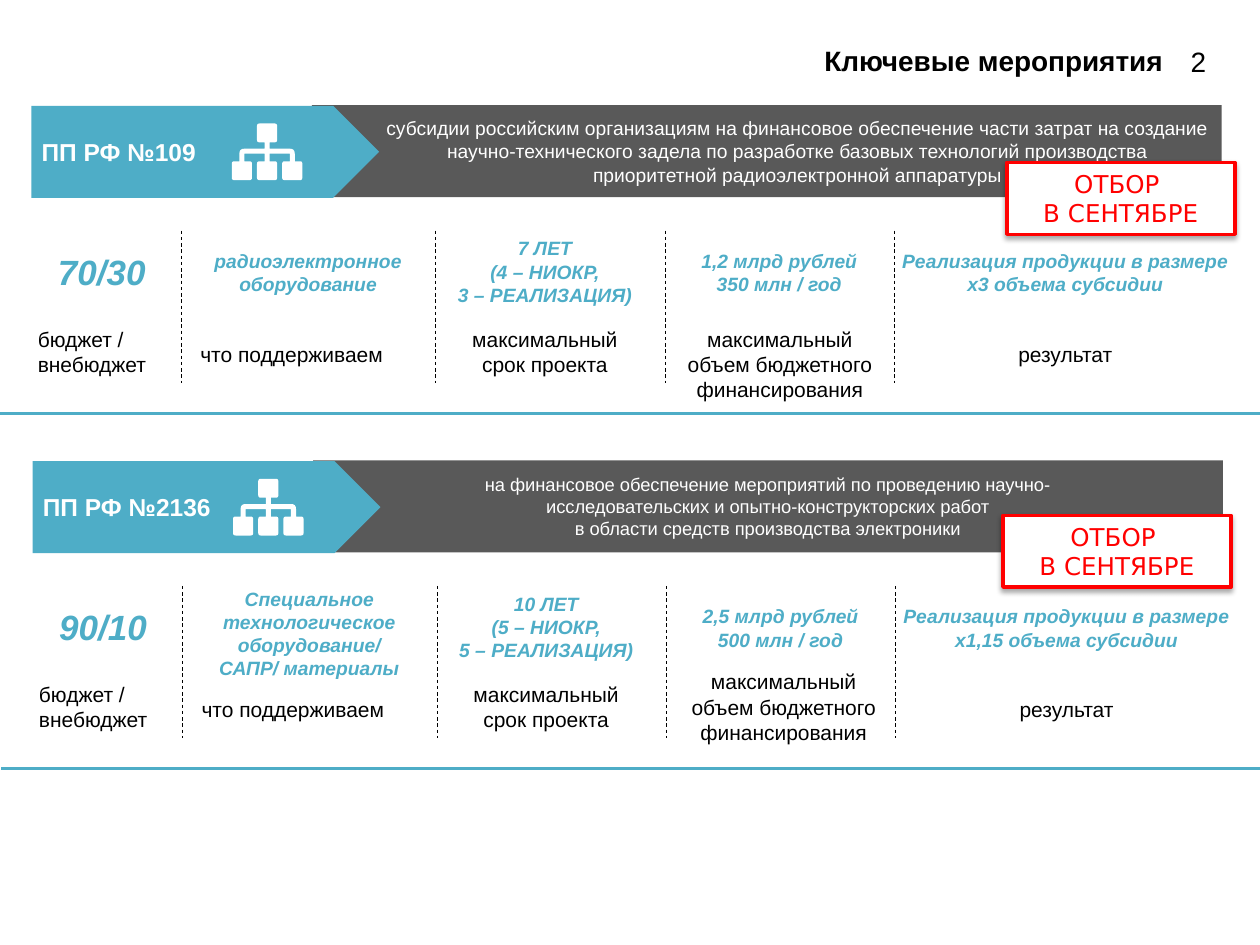
from copy import deepcopy

from pptx import Presentation
from pptx.dml.color import RGBColor
from pptx.enum.dml import MSO_LINE
from pptx.enum.shapes import MSO_CONNECTOR, MSO_SHAPE
from pptx.enum.text import MSO_ANCHOR, MSO_AUTO_SIZE, PP_ALIGN
from pptx.oxml import parse_xml
from pptx.oxml.ns import nsdecls, qn
from pptx.util import Inches, Pt

TEAL = RGBColor(0x4E, 0xAD, 0xC7)
GRAY = RGBColor(0x59, 0x59, 0x59)
RED = RGBColor(0xFF, 0x00, 0x00)
WHITE = RGBColor(0xFF, 0xFF, 0xFF)
BLACK = RGBColor(0x00, 0x00, 0x00)

# Second programme relative to the first
SHIFT_X, SHIFT_Y = 0.01, 2.82
DIVIDERS = (1.44, 3.46, 5.28, 7.1)

# Captions: text, left, top, width, height, alignment
CAPTIONS = (
    ("бюджет /\vвнебюджет", 0.25, 2.54, 0.97, 0.5, PP_ALIGN.LEFT),
    ("что поддерживаем", 1.54, 2.66, 1.56, 0.3, PP_ALIGN.LEFT),
    ("максимальный\vсрок проекта", 3.69, 2.54, 1.27, 0.5, PP_ALIGN.CENTER),
    ("результат", 8.03, 2.66, 0.85, 0.3, PP_ALIGN.CENTER),
)
FUNDING_CAPTION = "максимальный\vобъем бюджетного\vфинансирования"

# Right half of the hierarchy icon: distance from the axis, depth, corner radius
ICON_HALF = (
    (0.08, 0, 0.02), (0.08, 0.15, 0.02), (0.02, 0.15, 0), (0.02, 0.2, 0),
    (0.22, 0.2, 0.04), (0.22, 0.3, 0), (0.28, 0.3, 0.02), (0.28, 0.45, 0.02),
    (0.12, 0.45, 0.02), (0.12, 0.3, 0.02), (0.18, 0.3, 0), (0.18, 0.24, 0),
    (0.02, 0.24, 0), (0.02, 0.3, 0), (0.08, 0.3, 0.02), (0.08, 0.45, 0.02),
)


def write(shape, text, size=12, color=BLACK, bold=False, italic=False,
          font="Arial", align=PP_ALIGN.LEFT, inset=0.05, wrap=True,
          anchor=MSO_ANCHOR.TOP, grow=False):
    """Fill a shape with text; newline starts a paragraph, \\v breaks a line."""
    frame = shape.text_frame
    frame.text = text
    frame.word_wrap = wrap
    frame.vertical_anchor = anchor
    frame.auto_size = MSO_AUTO_SIZE.SHAPE_TO_FIT_TEXT if grow else MSO_AUTO_SIZE.NONE
    frame.margin_left = frame.margin_right = Inches(inset)
    frame.margin_top = frame.margin_bottom = Inches(min(inset, 0.08))
    for paragraph in frame.paragraphs:
        paragraph.alignment = align
        for run in paragraph.runs:
            run.font.size, run.font.name = Pt(size), font
            run.font.bold, run.font.italic = bold, italic
            run.font.color.rgb = color
        # Line breaks take the size of the text around them
        for line_break in paragraph._p.findall(qn("a:br")):
            line_break.insert(0, deepcopy(paragraph.runs[0]._r.rPr))


def add_label(slide, text, left, top, width, height, **text_format):
    label = slide.shapes.add_textbox(
        Inches(left), Inches(top), Inches(width), Inches(height))
    write(label, text, wrap=False, grow=True, **text_format)


def add_block(slide, kind, left, top, width, height, fill):
    block = slide.shapes.add_shape(
        kind, Inches(left), Inches(top), Inches(width), Inches(height))
    block.shadow.inherit = False
    block.fill.solid()
    block.fill.fore_color.rgb = fill
    block.line.fill.background()
    return block


def add_rule(slide, x1, y1, x2, y2, color, width, dash=None):
    rule = slide.shapes.add_connector(
        MSO_CONNECTOR.STRAIGHT, Inches(x1), Inches(y1), Inches(x2), Inches(y2))
    rule.line.color.rgb = color
    rule.line.width = Pt(width)
    if dash:
        rule.line.dash_style = dash
    rule._element.spPr.append(parse_xml(f"<a:effectLst {nsdecls('a')}/>"))


def round_corners(corners, steps=4):
    """Replace each corner that has a radius by points on a small curve."""
    points = []
    for i, (x, y, radius) in enumerate(corners):
        if not radius:
            points.append((x, y))
            continue
        ends = []
        for nx, ny, _ in (corners[i - 1], corners[(i + 1) % len(corners)]):
            share = radius / (abs(nx - x) + abs(ny - y))
            ends.append((x + (nx - x) * share, y + (ny - y) * share))
        (ax, ay), (bx, by) = ends
        for step in range(steps + 1):
            t = step / steps
            a, c, b = (1 - t) ** 2, 2 * t * (1 - t), t ** 2
            points.append((a * ax + c * x + b * bx, a * ay + c * y + b * by))
    return points


def add_hierarchy_icon(slide, axis, top):
    mirrored = [(-x, y, radius) for x, y, radius in reversed(ICON_HALF)]
    points = [(Inches(axis + x), Inches(top + y))
              for x, y in round_corners(list(ICON_HALF) + mirrored)]
    builder = slide.shapes.build_freeform(*points[0])
    builder.add_line_segments(points[1:], close=True)
    icon = builder.convert_to_shape()
    icon.shadow.inherit = False
    icon.fill.solid()
    icon.fill.fore_color.rgb = WHITE
    icon.line.fill.background()


def add_banner(slide, number, purpose, dx, dy, size, indent):
    # Purpose: a plate turned by 90 degrees, with its text turned back
    plate = add_block(slide, MSO_SHAPE.PENTAGON, 5.72 + dx, -2.41 + dy, 0.73, 7.22, GRAY)
    plate.adjustments[0] = 0
    plate.rotation = 90
    write(plate, purpose, size=size, color=WHITE, align=PP_ALIGN.CENTER,
          inset=0.08, anchor=MSO_ANCHOR.MIDDLE)
    plate.text_frame._txBody.bodyPr.set("vert", "vert270")
    if indent:
        properties = plate.text_frame.paragraphs[0]._p.get_or_add_pPr()
        properties.set("marL", str(Inches(indent)))
        properties.set("indent", "0")
    # Decree number
    arrow = add_block(slide, MSO_SHAPE.PENTAGON, 0.25 + dx, 0.84 + dy, 2.76, 0.73, TEAL)
    write(arrow, number, size=14, color=WHITE, bold=True, inset=0.08,
          anchor=MSO_ANCHOR.MIDDLE)
    add_hierarchy_icon(slide, 2.12 + dx, 0.98 + dy)


def add_badge(slide, left, top):
    badge = add_block(slide, MSO_SHAPE.RECTANGLE, left, top, 1.81, 0.57, WHITE)
    badge.line.color.rgb = RED
    badge.line.width = Pt(2)
    write(badge, "ОТБОР \nВ СЕНТЯБРЕ", size=14, color=RED, font="DejaVu Sans",
          align=PP_ALIGN.CENTER, anchor=MSO_ANCHOR.MIDDLE, grow=True)
    effects = badge._element.spPr.find(qn("a:effectLst"))
    effects.append(parse_xml(
        f'<a:outerShdw {nsdecls("a")} blurRad="{Pt(3)}" dist="{Pt(1.8)}" '
        'dir="5400000" rotWithShape="0"><a:srgbClr val="000000">'
        '<a:alpha val="35000"/></a:srgbClr></a:outerShdw>'))


def add_programme(slide, row, number, purpose, share, figures, funding_at,
                  badge_at, size, indent=0):
    dx, dy = row * SHIFT_X, row * SHIFT_Y
    add_banner(slide, number, purpose, dx, dy, size, indent)
    # Key figures
    add_label(slide, share, 0.41 + dx, 1.94 + dy, 0.8, 0.44,
              size=20, color=TEAL, bold=True, italic=True)
    for text, left, top, width, height in figures:
        add_label(slide, text, left + dx, top + dy, width, height, size=11,
                  color=TEAL, bold=True, italic=True, align=PP_ALIGN.CENTER)
    # Captions below them
    for text, left, top, width, height, align in CAPTIONS:
        add_label(slide, text, left + dx, top + dy, width, height, align=align)
    add_label(slide, FUNDING_CAPTION, *funding_at, 1.58, 0.71, align=PP_ALIGN.CENTER)
    # Column dividers and closing rule
    for x in DIVIDERS:
        add_rule(slide, x + dx, 1.83 + dy, x + dx, 3.04 + dy, BLACK, 0.5, MSO_LINE.DASH)
    add_rule(slide, dx, 3.28 + dy, 10 + dx, 3.28 + dy, TEAL, 2)
    add_badge(slide, *badge_at)


def main():
    deck = Presentation()
    deck.slide_width, deck.slide_height = Inches(10), Inches(7.5)
    slide = deck.slides.add_slide(deck.slide_layouts[5])

    # Title and page number
    title = slide.shapes.title
    title.left, title.top = Inches(4.33), Inches(0.29)
    title.width, title.height = Inches(5), Inches(0.37)
    write(title, "Ключевые мероприятия", size=16, bold=True,
          align=PP_ALIGN.RIGHT, inset=0.1, anchor=MSO_ANCHOR.MIDDLE)
    add_label(slide, "2", 9.45, 0.35, 0.12, 0.27, size=16, align=PP_ALIGN.RIGHT, inset=0)

    add_programme(
        slide, 0, "ПП РФ №109",
        "субсидии российским организациям на финансовое обеспечение части затрат "
        "на создание научно-технического задела по разработке базовых технологий "
        "производства приоритетной радиоэлектронной аппаратуры",
        "70/30",
        (("радиоэлектронное\vоборудование", 1.64, 1.93, 1.61, 0.47),
         ("7 ЛЕТ\n(4 – НИОКР,\v3 – РЕАЛИЗАЦИЯ)", 3.58, 1.83, 1.49, 0.66),
         ("1,2 млрд рублей\n350 млн / год", 5.51, 1.93, 1.35, 0.47),
         ("Реализация продукции в размере\nх3 объема субсидии", 7.1, 1.93, 2.71, 0.47)),
        funding_at=(5.4, 2.54), badge_at=(7.99, 1.29), size=11, indent=0.49)
    add_programme(
        slide, 1, "ПП РФ №2136",
        "на финансовое обеспечение мероприятий по проведению научно-\v"
        "исследовательских и опытно-конструкторских работ\v"
        "в области средств производства электроники",
        "90/10",
        (("Специальное\vтехнологическое\vоборудование/\nСАПР/ материалы",
          1.67, 1.79, 1.55, 0.84),
         ("10 ЛЕТ\n(5 – НИОКР,\v5 – РЕАЛИЗАЦИЯ)", 3.58, 1.83, 1.49, 0.66),
         ("2,5 млрд рублей\n500 млн / год", 5.51, 1.93, 1.35, 0.47),
         ("Реализация продукции в размере\nх1,15 объема субсидии", 7.1, 1.93, 2.71, 0.47)),
        funding_at=(5.43, 5.26), badge_at=(7.96, 4.09), size=10.5)

    deck.save("out.pptx")


if __name__ == "__main__":
    main()
